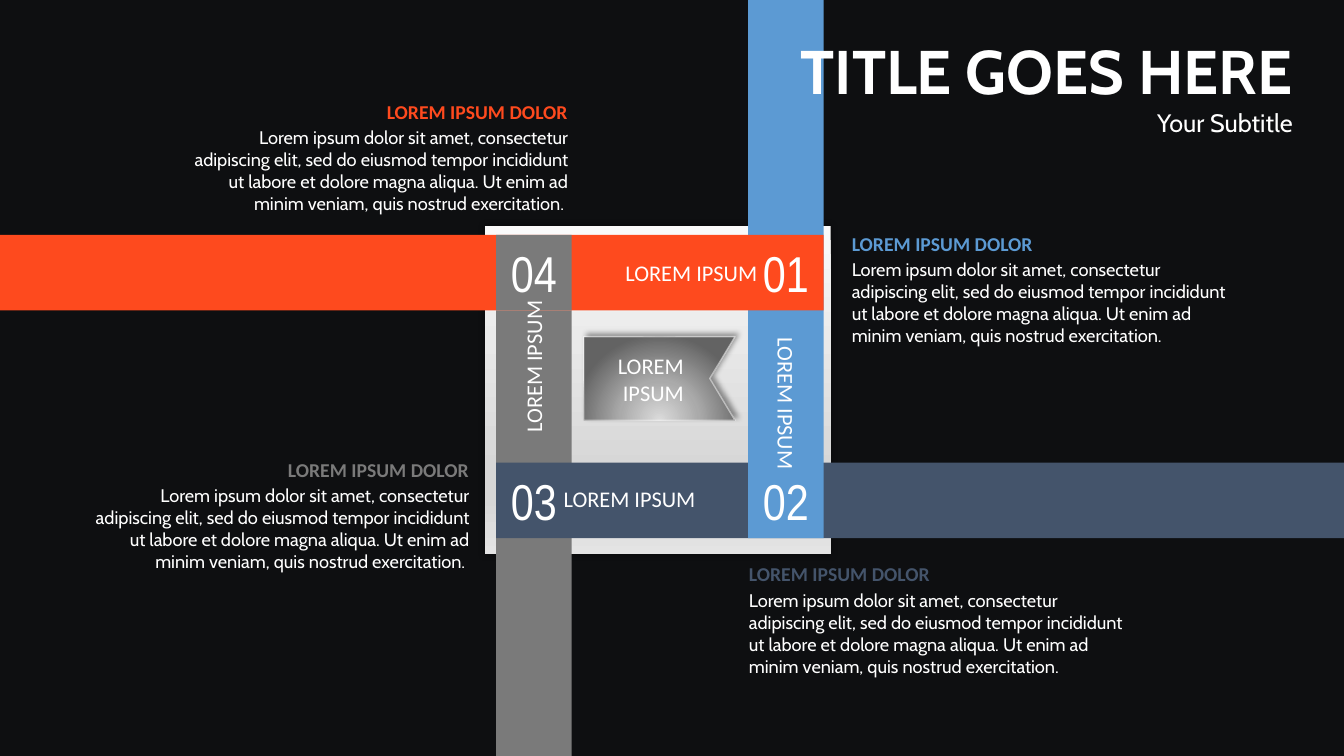
import pptx
import pptx.util
import pptx.dml.color
import pptx.enum.shapes
import pptx.enum.text
import pptx.oxml
import pptx.oxml.ns

Inches = pptx.util.Inches
Pt = pptx.util.Pt
RGBColor = pptx.dml.color.RGBColor
qn = pptx.oxml.ns.qn
LEFT = pptx.enum.text.PP_ALIGN.LEFT
CENTER = pptx.enum.text.PP_ALIGN.CENTER
RIGHT = pptx.enum.text.PP_ALIGN.RIGHT

BLACK = RGBColor(0x0E, 0x0F, 0x11)
WHITE = RGBColor(0xFF, 0xFF, 0xFF)
ORANGE = RGBColor(0xFE, 0x4A, 0x1E)
BLUE = RGBColor(0x5C, 0x9A, 0xD3)
NAVY = RGBColor(0x44, 0x54, 0x6B)
GRAY = RGBColor(0x7A, 0x7A, 0x7A)
FRAME_STOPS = [(0, RGBColor(0xFA, 0xFA, 0xFA)), (74, RGBColor(0xD7, 0xD7, 0xD7)),
               (83, RGBColor(0xD7, 0xD7, 0xD7)), (100, RGBColor(0xE4, 0xE4, 0xE4))]
RIBBON_STOPS = [(0, RGBColor(0xDB, 0xDB, 0xDB)), (46, RGBColor(0xAA, 0xAA, 0xAA)),
                (100, RGBColor(0x63, 0x63, 0x63))]

SLIDE_W, SLIDE_H = 13.33, 7.5
BAR = 0.75  # thickness of every band
LABEL = "LOREM IPSUM"
HEADING = "LOREM IPSUM DOLOR"
BODY = ("Lorem ipsum dolor sit amet, consectetur adipiscing elit, sed do eiusmod "
        "tempor incididunt ut labore et dolore magna aliqua. Ut enim ad minim "
        "veniam, quis nostrud exercitation.")


def add_xml(parent, tag, **attrs):
    child = parent.makeelement(qn(tag), {k: str(v) for k, v in attrs.items()})
    parent.append(child)
    return child


def add_gradient(s, stops, radial=False):
    s.fill.gradient()
    grad = s._element.spPr.find(qn("a:gradFill"))
    for child in list(grad):
        grad.remove(child)
    stop_list = add_xml(grad, "a:gsLst")
    for pos, color in stops:
        stop = add_xml(stop_list, "a:gs", pos=pos * 1000)
        add_xml(stop, "a:srgbClr", val=color)
    if radial:
        circle = add_xml(grad, "a:path", path="circle")
        add_xml(circle, "a:fillToRect", l=50000, t=130000, r=50000, b=-30000)
    else:
        add_xml(grad, "a:lin", ang=90 * 60000, scaled=0)


def add_shadow(s, blur, dist=0, angle=0):
    effects = s._element.spPr.find(qn("a:effectLst"))
    shadow = add_xml(effects, "a:outerShdw", blurRad=Pt(blur), dist=Pt(dist),
                     dir=angle * 60000, algn="ctr", rotWithShape=0)
    add_xml(add_xml(shadow, "a:srgbClr", val="000000"), "a:alpha", val=40000)


def add_rect(slide, x, y, w, h, color=None):
    s = slide.shapes.add_shape(pptx.enum.shapes.MSO_SHAPE.RECTANGLE,
                               Inches(x), Inches(y), Inches(w), Inches(h))
    s.shadow.inherit = False
    s.line.fill.background()
    if color is not None:
        s.fill.solid()
        s.fill.fore_color.rgb = color
    return s


def add_text(slide, box, lines, align, inset=(0.1, 0.05), rotation=0):
    """Each line is (text, size, font name, colour, bold, space before)."""
    s = slide.shapes.add_textbox(*(Inches(v) for v in box))
    s.rotation = rotation
    tf = s.text_frame
    tf.word_wrap = True
    tf.auto_size = pptx.enum.text.MSO_AUTO_SIZE.SHAPE_TO_FIT_TEXT
    tf.margin_left = tf.margin_right = Inches(inset[0])
    tf.margin_top = tf.margin_bottom = Inches(inset[1])
    for i, (text, size, name, color, bold, before) in enumerate(lines):
        p = tf.add_paragraph() if i else tf.paragraphs[0]
        p.text = text
        p.alignment = align
        if before:
            p.space_before = Pt(before)
        p.font.size = Pt(size)
        p.font.name = name
        p.font.color.rgb = color
        p.font.bold = bold


def add_label(slide, box, texts, align, size=16, name="Calibri", rotation=0):
    lines = [(text, size, name, WHITE, False, 0) for text in texts]
    add_text(slide, box, lines, align, (0.07, 0.03), rotation)


def add_ribbon(slide, x, y, w, h):
    notch = 0.25
    points = [(x + w, y), (x + w - notch, y + h / 2), (x + w, y + h), (x, y + h)]
    builder = slide.shapes.build_freeform(Inches(x), Inches(y), scale=1.0)
    builder.add_line_segments([(Inches(px), Inches(py)) for px, py in points], close=True)
    s = builder.convert_to_shape()
    s.shadow.inherit = False
    add_gradient(s, RIBBON_STOPS, radial=True)
    s.line.color.rgb = WHITE
    s.line.width = Pt(1)
    line_color = next(s._element.spPr.find(qn("a:ln")).iter(qn("a:srgbClr")))
    add_xml(line_color, "a:alpha", val=50000)
    add_shadow(s, 4, 3, 315)
    add_label(slide, (x + 0.17, y + 0.12, 1.04, 0.61), ["LOREM ", "IPSUM"], CENTER)


def add_woven_frame(slide, x, y, w, h):
    left, right = x + 0.11, x + 2.61
    top, bottom = y + 0.09, y + 2.35

    # Pale panel behind the bands
    panel = add_rect(slide, x, y, w, h)
    add_gradient(panel, FRAME_STOPS)
    add_shadow(panel, 5)

    # Bands, each running off one edge; the last square closes the weave
    add_rect(slide, left, top + BAR, BAR, SLIDE_H - top - BAR, GRAY)
    add_rect(slide, left, bottom, SLIDE_W - left, BAR, NAVY)
    add_rect(slide, right, 0, BAR, bottom + BAR, BLUE)
    add_rect(slide, 0, top, right + BAR, BAR, ORANGE)
    add_rect(slide, left, top, BAR, BAR, GRAY)

    # Corner numbers, clockwise from top right
    corners = [(right, top), (right, bottom), (left, bottom), (left, top)]
    for i, (cx, cy) in enumerate(corners, 1):
        add_label(slide, (cx, cy + 0.04, BAR, 0.67), [f"{i:02}"], CENTER,
                  36, "Arial Narrow")

    # Band labels
    for dx, dy, align, rotation in [(1.12, 0.3, RIGHT, 0), (0.71, 2.54, LEFT, 0),
                                    (-0.34, 1.33, RIGHT, 270), (2.16, 1.49, RIGHT, 90)]:
        add_label(slide, (x + dx, y + dy, 1.65, 0.34), [LABEL], align, rotation=rotation)

    add_ribbon(slide, x + 0.98, y + 1.1, 1.5, 0.83)


def add_description(slide, x, y, color, align):
    body = BODY + " " if align == RIGHT else BODY
    add_text(slide, (x, y, 3.97, 1.25),
             [(HEADING, 14, "Calibri", color, True, 0),
              (body, 13, "Cabin", WHITE, False, 2.4)], align)


def add_title(slide, x, y, w, h):
    add_text(slide, (x, y, w, h),
             [("TITLE GOES HERE", 44, "Cabin", WHITE, True, 0),
              ("Your Subtitle", 18, "Cabin", WHITE, False, 0)], RIGHT)


def main():
    prs = pptx.Presentation()
    prs.slide_width, prs.slide_height = Inches(SLIDE_W), Inches(SLIDE_H)
    slide = prs.slides.add_slide(prs.slide_layouts[6])
    slide.background.fill.solid()
    slide.background.fill.fore_color.rgb = BLACK

    add_woven_frame(slide, 4.81, 2.24, 3.43, 3.26)
    add_title(slide, 6.9, 0.28, 6.02, 1.14)
    for x, y, color, align in [(8.35, 2.25, BLUE, LEFT), (7.33, 5.53, NAVY, LEFT),
                               (0.78, 4.49, GRAY, RIGHT), (1.76, 0.94, ORANGE, RIGHT)]:
        add_description(slide, x, y, color, align)

    prs.save("out.pptx")


if __name__ == "__main__":
    main()
